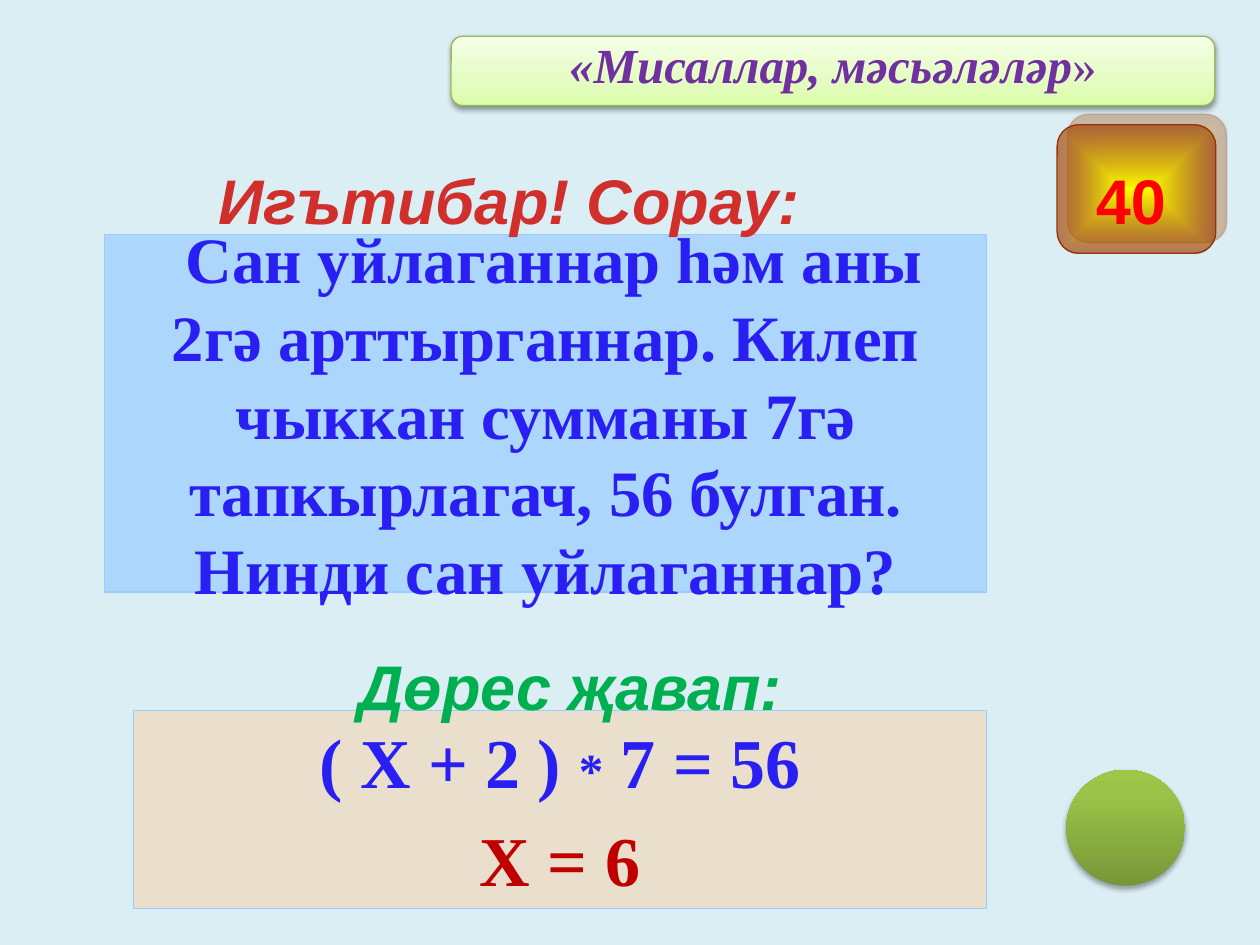
from dataclasses import dataclass
from typing import Optional

from lxml.etree import SubElement
from pptx import Presentation
from pptx.dml.color import RGBColor
from pptx.enum.shapes import MSO_SHAPE as Shape
from pptx.enum.text import MSO_ANCHOR as Anchor, PP_ALIGN as Align
from pptx.oxml import parse_xml
from pptx.oxml.ns import nsdecls, qn
from pptx.util import Pt

COLORS = {
    "background": "DBEEF4", "blue": "291FF3", "sky": "99CCFF", "peach": "FFCC99",
    "answer": "C00000", "green": "00B050", "red": "D02F2C", "score": "FF0000",
    "purple": "7030A0", "yellow": "FFFF00", "brown": "993300", "tan": "996633",
    "black": "000000", "moss": "779737", "leaf": "9BC348", "lime": "9DC746",
    "mint": "DAFDA7", "pale": "E4FCC2", "cream": "F5FFE7", "olive": "98B955",
}
SERIF, SANS = "Times New Roman", "Arial"


@dataclass
class Run:
    text: str
    size: float
    color: str
    font: str = SERIF
    bold: bool = True
    italic: bool = False


@dataclass
class Gradient:
    stops: list[tuple[int, str, int]]
    angle: Optional[int] = None


@dataclass
class Shadow:
    color: str
    alpha: int
    blur: float
    distance: float
    angle: int


@dataclass
class Panel:
    kind: Shape
    box: tuple[float, float, float, float]
    fill: "Gradient | tuple[str, int]"
    line: Optional[str] = None
    shadow: Optional[Shadow] = None
    lines: tuple[list[Run], ...] = ()
    space_before: float = 0
    side_inset: float = 7.2
    bottom_inset: float = 3.6
    wrap: bool = True


@dataclass
class Label:
    box: tuple[float, float, float, float]
    run: Run


def rgb(name: str) -> RGBColor:
    """Look up a named colour."""
    return RGBColor.from_string(COLORS[name])


def add_alpha(parent, percent: int) -> None:
    """Set the opacity of a colour element."""
    SubElement(parent, qn("a:alpha")).set("val", str(percent * 1000))


def fill_gradient(s, gradient: Gradient) -> None:
    """Fill a shape with a linear gradient, or one from its centre."""
    fill = parse_xml(f'<a:gradFill {nsdecls("a")} rotWithShape="1"><a:gsLst/></a:gradFill>')
    for position, name, alpha in gradient.stops:
        stop = SubElement(fill[0], qn("a:gs"), pos=str(position * 1000))
        add_alpha(SubElement(stop, qn("a:srgbClr"), val=COLORS[name]), alpha)
    if gradient.angle is None:
        shade = SubElement(fill, qn("a:path"))
        shade.set("path", "shape")
        SubElement(shade, qn("a:fillToRect"), l="50000", t="50000", r="50000", b="50000")
    else:
        SubElement(fill, qn("a:lin"), ang=str(gradient.angle * 60000), scaled="0")
    s._element.spPr.find(qn("a:prstGeom")).addnext(fill)


def add_shadow(s, shadow: Shadow) -> None:
    """Give a shape an outer shadow."""
    effects = s._element.spPr.find(qn("a:effectLst"))
    outer = SubElement(effects, qn("a:outerShdw"), blurRad=str(Pt(shadow.blur)),
                       dist=str(Pt(shadow.distance)), dir=str(shadow.angle * 60000),
                       algn="ctr", rotWithShape="0")
    add_alpha(SubElement(outer, qn("a:srgbClr"), val=COLORS[shadow.color]), shadow.alpha)


def write_runs(p, runs: list[Run]) -> None:
    """Write centred, formatted runs into a paragraph."""
    p.alignment = Align.CENTER
    for run in runs:
        r = p.add_run()
        r.text = run.text
        r.font.name, r.font.size = run.font, Pt(run.size)
        r.font.bold, r.font.italic = run.bold, run.italic
        r.font.color.rgb = rgb(run.color)


def add_panel(slide, panel: Panel) -> None:
    """Draw a filled shape with its text."""
    s = slide.shapes.add_shape(panel.kind, *map(Pt, panel.box))
    s.shadow.inherit = False
    if panel.line:
        s.line.color.rgb, s.line.width = rgb(panel.line), Pt(0.75)
    else:
        s.line.fill.background()
    if isinstance(panel.fill, Gradient):
        fill_gradient(s, panel.fill)
    else:
        name, alpha = panel.fill
        s.fill.solid()
        s.fill.fore_color.rgb = rgb(name)
        add_alpha(s._element.spPr.find(qn("a:solidFill"))[0], alpha)
    if panel.shadow:
        add_shadow(s, panel.shadow)
    tf = s.text_frame
    tf.word_wrap, tf.vertical_anchor = panel.wrap, Anchor.MIDDLE
    tf.margin_left = tf.margin_right = Pt(panel.side_inset)
    tf.margin_bottom = Pt(panel.bottom_inset)
    for i, runs in enumerate(panel.lines):
        p = tf.add_paragraph() if i else tf.paragraphs[0]
        p.space_before = Pt(panel.space_before)
        write_runs(p, runs)


def add_label(slide, label: Label) -> None:
    """Draw a one-line text box."""
    tf = slide.shapes.add_textbox(*map(Pt, label.box)).text_frame
    tf.word_wrap = False
    tf.margin_left = tf.margin_right = 0
    write_runs(tf.paragraphs[0], [label.run])


QUESTION = (" Сан уйлаганнар һәм аны 2гә арттырганнар. Килеп чыккан сумманы 7гә "
            "тапкырлагач, 56 булган. Нинди сан уйлаганнар?")
ITEMS = [
    Panel(Shape.OVAL, (609.4, 439.9, 67.7, 66.2),
          Gradient([(0, "moss", 100), (80, "leaf", 100), (100, "lime", 100)], 270),
          shadow=Shadow("black", 35, 3.1, 1.8, 90)),
    Panel(Shape.RECTANGLE, (59.8, 133.9, 504, 204.5), ("sky", 70), "sky",
          lines=([Run(QUESTION, 37, "blue")],), space_before=7.4, side_inset=14),
    Panel(Shape.RECTANGLE, (76.3, 406.1, 487.4, 113), ("peach", 42), "sky",
          lines=([Run("( Х + 2 ) ", 40, "blue"), Run("*", 28, "blue"),
                  Run(" 7 = 56", 40, "blue")], [Run("Х = 6", 40, "answer")]),
          space_before=8.5),
    Label((127.4, 366.5, 396.7, 28.8), Run("Дөрес җавап:", 36, "green", SANS, italic=True)),
    Label((70.6, 88.6, 430.6, 40.3), Run(" Игътибар! Сорау:", 36, "red", SANS, italic=True)),
    Panel(Shape.ROUNDED_RECTANGLE, (604.1, 71.3, 90.7, 73.4),
          Gradient([(0, "yellow", 100), (100, "brown", 62)]), "brown",
          Shadow("tan", 50, 0, 8.5, 315)),
    Label((625.7, 88.6, 41, 39.6), Run("40", 36, "score", SANS)),
    Panel(Shape.ROUNDED_RECTANGLE, (257.8, 20.7, 436.3, 39.6),
          Gradient([(0, "mint", 100), (35, "pale", 100), (100, "cream", 100)], 270), "olive",
          Shadow("black", 38, 3.1, 1.6, 90),
          lines=([Run("«Мисаллар, мәсьәләләр", 28, "purple", italic=True),
                  Run("»", 28, "purple", bold=False)],),
          bottom_inset=11, wrap=False),
]


def main() -> None:
    """Build the quiz slide."""
    prs = Presentation()
    prs.slide_width, prs.slide_height = Pt(720), Pt(540)
    slide = prs.slides.add_slide(prs.slide_layouts[6])
    slide.background.fill.solid()
    slide.background.fill.fore_color.rgb = rgb("background")
    for item in ITEMS:
        draw = add_panel if isinstance(item, Panel) else add_label
        draw(slide, item)
    prs.save("out.pptx")


if __name__ == "__main__":
    main()
